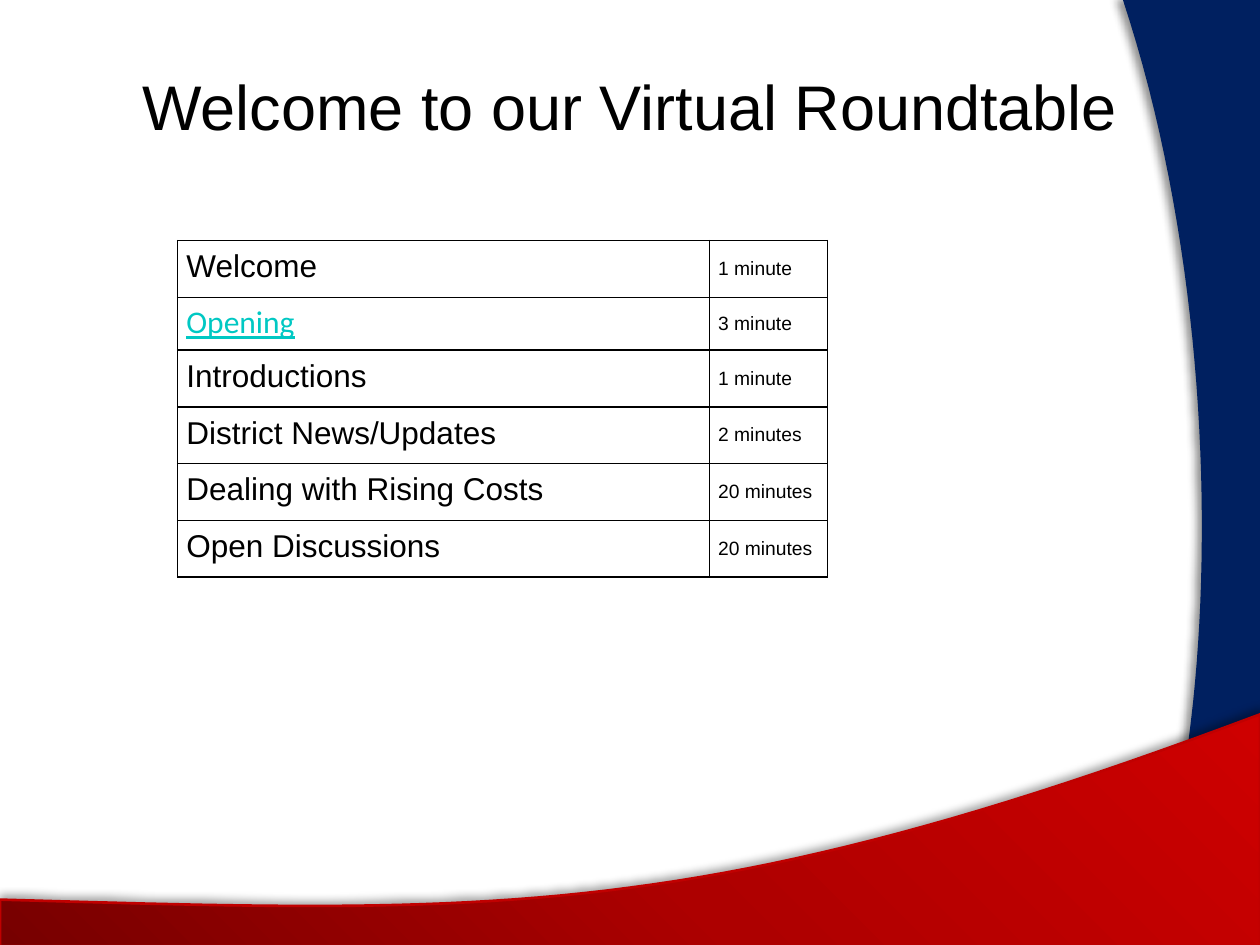
"""Builds the agenda slide of the virtual roundtable."""
import copy

import lxml.etree
import pptx
import pptx.dml.color
import pptx.enum.text
import pptx.oxml
import pptx.oxml.ns
import pptx.util

Inches = pptx.util.Inches
Pt = pptx.util.Pt
qn = pptx.oxml.ns.qn

TITLE = "Welcome to our Virtual Roundtable"
AGENDA = [
    ("Welcome", "1 minute"),
    ("Opening", "3 minute"),
    ("Introductions", "1 minute"),
    ("District News/Updates", "2 minutes"),
    ("Dealing with Rising Costs", "20 minutes"),
    ("Open Discussions", "20 minutes"),
]
LINKED_ITEM = "Opening"
COLUMN_WIDTHS = (4.22, 0.94)
ROW_HEIGHT, LINKED_ROW_HEIGHT = 0.45, 0.42
CURVE_STEPS = 48

BLUE_BAND = {
    "curve": [(9.03, 7.49), (9.65, 6.18), (9.83, 2.74), (8.92, -0.01)],
    "corners": [(10, -0.01), (10, 7.49)],
    "colors": ["002060"],
    "line": "002060",
    "shadow": {"opacity": 44, "distance": 4, "angle": 180},
}
RED_BAND = {
    "curve": [(10, 5.67), (5.59, 7.33), (3.91, 7.25), (0, 7.14)],
    "corners": [(0, 7.51), (10, 7.51)],
    "colors": ["770000", "AD0000", "CE0000"],
    "line": "C00000",
    "shadow": {"opacity": 35, "distance": 3.5, "angle": 270},
}


def color(value):
    return pptx.dml.color.RGBColor.from_string(value)


def curve_points(start, first, second, end):
    points = []
    for step in range(CURVE_STEPS + 1):
        t = step / CURVE_STEPS
        weights = ((1 - t) ** 3, 3 * t * (1 - t) ** 2, 3 * t**2 * (1 - t), t**3)
        points.append(tuple(
            sum(weight * value for weight, value in zip(weights, values))
            for values in zip(start, first, second, end)
        ))
    return points


def add_shadow(shape, opacity, distance, angle):
    shape.shadow.inherit = False
    effects = shape._element.spPr.find(qn("a:effectLst"))
    shadow = lxml.etree.SubElement(
        effects, qn("a:outerShdw"), blurRad=str(Pt(5)), dist=str(Pt(distance)),
        dir=str(angle * 60000), algn="ctr", rotWithShape="0")
    shade = lxml.etree.SubElement(shadow, qn("a:srgbClr"), val="000000")
    lxml.etree.SubElement(shade, qn("a:alpha"), val=str(opacity * 1000))


def fill_gradient(shape, colors):
    shape.fill.gradient()
    shape.fill.gradient_angle = 45
    stop_list = shape._element.spPr.find(".//" + qn("a:gsLst"))
    for _ in range(len(colors) - len(stop_list)):
        stop_list.insert(1, copy.deepcopy(stop_list[0]))
    for index, (stop, value) in enumerate(zip(shape.fill.gradient_stops, colors)):
        stop.color.rgb = color(value)
        stop.position = index / (len(colors) - 1)


def add_band(page, curve, corners, colors, line, shadow):
    outline = [(Inches(x), Inches(y)) for x, y in curve_points(*curve) + corners]
    builder = page.shapes.build_freeform(*outline[0])
    builder.add_line_segments(outline[1:], close=True)
    band = builder.convert_to_shape()
    if len(colors) > 1:
        fill_gradient(band, colors)
    else:
        band.fill.solid()
        band.fill.fore_color.rgb = color(colors[0])
    band.line.color.rgb = color(line)
    band.line.width = Pt(1.5)
    add_shadow(band, **shadow)


def write(frame, text, size, font="Arial", fill="000000", underline=False,
          align=None, spacing=None):
    para = frame.paragraphs[0]
    para.alignment = align
    para.line_spacing = spacing
    span = para.add_run()
    span.text = text
    span.font.name = font
    span.font.size = Pt(size)
    span.font.underline = underline
    span.font.color.rgb = color(fill)


def add_borders(cell):
    properties = cell._tc.get_or_add_tcPr()
    for index, side in enumerate(("lnL", "lnR", "lnT", "lnB")):
        properties.insert(index, pptx.oxml.parse_xml(
            f'<a:{side} {pptx.oxml.ns.nsdecls("a")} w="{Pt(1)}">'
            f'<a:solidFill><a:srgbClr val="000000"/></a:solidFill></a:{side}>'))


def add_agenda(page):
    heights = [LINKED_ROW_HEIGHT if item == LINKED_ITEM else ROW_HEIGHT
               for item, _ in AGENDA]
    table = page.shapes.add_table(
        len(AGENDA), len(COLUMN_WIDTHS), Inches(1.41), Inches(1.91),
        Inches(sum(COLUMN_WIDTHS)), Inches(sum(heights))).table
    table.first_row = table.horz_banding = False
    for column, width in zip(table.columns, COLUMN_WIDTHS):
        column.width = Inches(width)
    for row, height, (item, duration) in zip(table.rows, heights, AGENDA):
        row.height = Inches(height)
        for cell in row.cells:
            cell.margin_left = cell.margin_right = Inches(0.07)
            cell.margin_top = cell.margin_bottom = Inches(0.07)
            cell.fill.background()
            add_borders(cell)
        item_cell, duration_cell = row.cells
        if item == LINKED_ITEM:
            write(item_cell.text_frame, item, 18, font="Calibri", fill="00C8C3",
                  underline=True, spacing=0.9)
        else:
            write(item_cell.text_frame, item, 18)
        duration_cell.vertical_anchor = pptx.enum.text.MSO_ANCHOR.MIDDLE
        write(duration_cell.text_frame, duration, 11)


def format_title(page):
    title = page.shapes.title
    title.left, title.top = Inches(1), Inches(0.22)
    title.width, title.height = Inches(8), Inches(1.23)
    frame = title.text_frame
    frame.margin_left = frame.margin_right = Inches(0.07)
    frame.margin_top = frame.margin_bottom = Inches(0.04)
    frame.vertical_anchor = pptx.enum.text.MSO_ANCHOR.MIDDLE
    frame.word_wrap = True
    write(frame, TITLE, 36, align=pptx.enum.text.PP_ALIGN.CENTER)
    page.shapes._spTree.append(title._element)


def main():
    deck = pptx.Presentation()
    deck.slide_width, deck.slide_height = Inches(10), Inches(7.5)
    page = deck.slides.add_slide(deck.slide_layouts[5])
    for band in (BLUE_BAND, RED_BAND):
        add_band(page, **band)
    format_title(page)
    add_agenda(page)
    deck.save("out.pptx")


if __name__ == "__main__":
    main()
